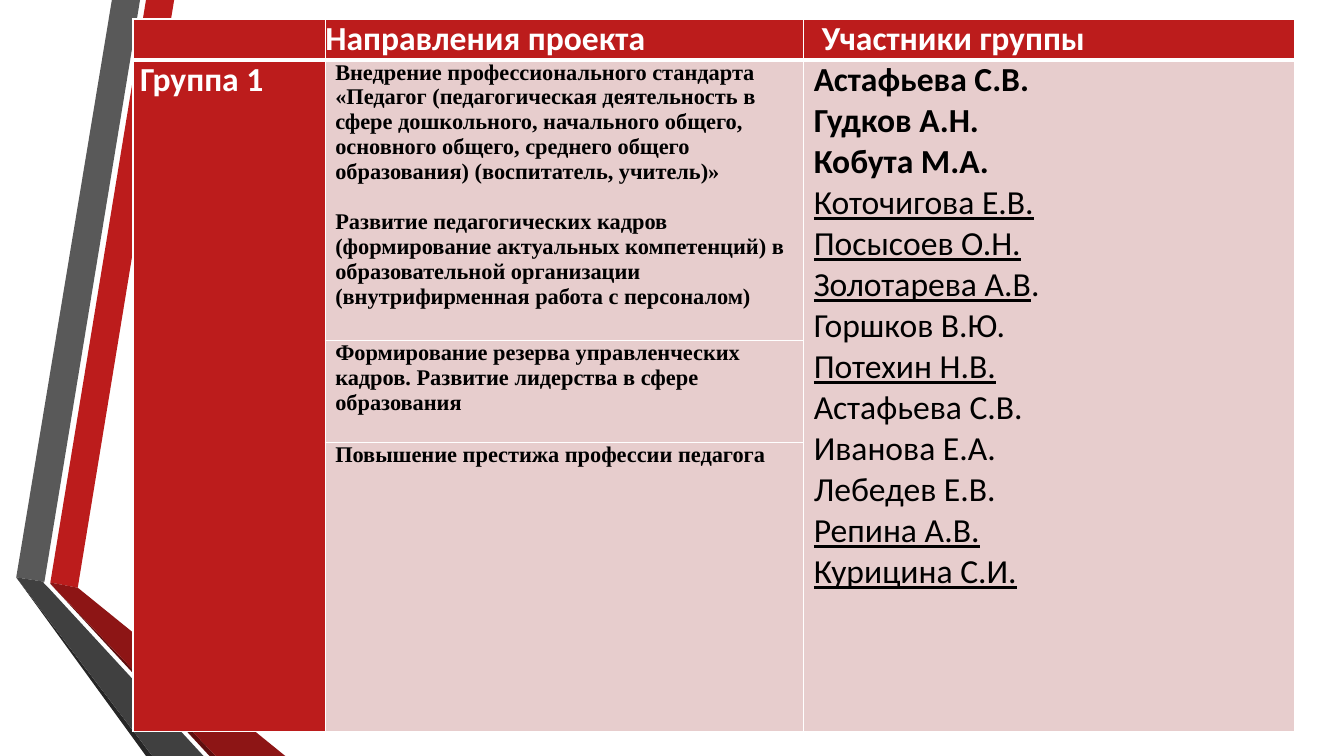
from lxml import etree
from pptx import Presentation
from pptx import util as u
from pptx.dml.color import RGBColor
from pptx.oxml.ns import qn

RED, PINK, WHITE, BLACK = "BC1C1C", "E7CDCD", "FFFFFF", "000000"
SANS, SERIF = "Calibri", "Times New Roman"

# Folded ribbons on the left: colour and outline in centimetres
RIBBONS = [
    (RED, [(1.27, 14.68), (1.96, 14.81), (4.39, 0), (3.68, 0)]),
    ("595959", [(3.53, 0), (2.82, 0), (0.41, 14.55), (1.12, 14.66)]),
    ("262626", [(0.41, 14.55), (3.68, 19.05), (3.84, 19.05)]),
    ("5E0E0E", [(1.27, 14.71), (5.28, 19.05), (5.44, 19.05)]),
    ("8D1515", [(1.27, 14.71), (5.44, 19.05), (7.19, 19.05),
                (1.96, 14.81), (1.27, 14.68)]),
    ("404040", [(5.13, 19.05), (1.22, 14.81), (1.09, 14.68),
                (1.12, 14.66), (0.41, 14.55), (3.84, 19.05)]),
]
COLUMNS = [4.85, 12.06, 12.37]
ROWS = [0.97, 7.06, 2.57, 7.29]

STANDARD = [
    "Внедрение профессионального стандарта «Педагог (педагогическая "
    "деятельность в сфере дошкольного, начального общего, основного общего, "
    "среднего общего образования) (воспитатель, учитель)»",
    "Развитие педагогических кадров (формирование актуальных компетенций) "
    "в образовательной организации (внутрифирменная работа с персоналом)",
]
RESERVE = ["Формирование резерва управленческих кадров. "
           "Развитие лидерства в сфере образования"]
PRESTIGE = ["Повышение престижа профессии педагога"]

# Each member: name and style (bold, underlined or plain)
MEMBERS = [
    ("Астафьева С.В.", "bold"), ("Гудков А.Н.", "bold"),
    ("Кобута М.А.", "bold"), ("Коточигова Е.В.", "underlined"),
    ("Посысоев О.Н.", "underlined"), ("Золотарева А.В", "underlined"),
    ("Горшков В.Ю.", "plain"), ("Потехин Н.В.", "underlined"),
    ("Астафьева С.В.", "plain"), ("Иванова Е.А.", "plain"),
    ("Лебедев Е.В.", "plain"), ("Репина А.В.", "underlined"),
    ("Курицина С.И.", "underlined"),
]


def colour(value):
    return RGBColor.from_string(value)


class Page:
    """Holds the text style and the slide being filled."""

    body_size, large_size = u.Pt(16), u.Pt(24)

    def __init__(self, deck):
        self.slide = deck.slides.add_slide(deck.slide_layouts[6])

    def ribbon(self, fill, points):
        corners = [(u.Cm(x), u.Cm(y)) for x, y in points]
        builder = self.slide.shapes.build_freeform(*corners[0])
        builder.add_line_segments(corners[1:], close=True)
        shape = builder.convert_to_shape()
        shape.shadow.inherit = False
        shape.fill.solid()
        shape.fill.fore_color.rgb = colour(fill)
        shape.line.fill.background()

    def table(self, left, top, columns, rows):
        frame = self.slide.shapes.add_table(
            len(rows), len(columns), u.Cm(left), u.Cm(top),
            u.Cm(sum(columns)), u.Cm(sum(rows)))
        table = frame.table
        for column, width in zip(table.columns, columns):
            column.width = u.Cm(width)
        for row, height in zip(table.rows, rows):
            row.height = u.Cm(height)
        for r in range(len(rows)):
            for c in range(len(columns)):
                cell = table.cell(r, c)
                self.borders(cell, {"lnL": 1, "lnR": 1,
                                    "lnT": 3 if r == 1 else 1,
                                    "lnB": 3 if r == 0 else 1})
                cell.fill.solid()
                cell.fill.fore_color.rgb = colour(
                    RED if r == 0 or c == 0 else PINK)
                cell.margin_left = cell.margin_right = 0
                cell.margin_top = cell.margin_bottom = 0
        return table

    def borders(self, cell, widths):
        properties = cell._tc.get_or_add_tcPr()
        for side, points in widths.items():
            line = etree.SubElement(properties, qn("a:" + side),
                                    w=str(u.Pt(points)))
            fill = etree.SubElement(line, qn("a:solidFill"))
            etree.SubElement(fill, qn("a:srgbClr"), val=WHITE)

    def style(self, span, font, size, ink, bold=True, underline=False):
        span.font.name, span.font.size = font, size
        span.font.color.rgb = colour(ink)
        span.font.bold, span.font.underline = bold, underline

    def heading(self, cell, words, indent=0):
        cell.margin_left = u.Cm(indent)
        para = cell.text_frame.paragraphs[0]
        para.text = words
        self.style(para.runs[0], SANS, self.large_size, WHITE)

    def directions(self, cell, lines):
        cell.margin_left = u.Cm(0.25)
        cell.text_frame.text = "\n".join(lines)
        for number, para in enumerate(cell.text_frame.paragraphs):
            if number:
                para.space_before = u.Pt(18)
            self.style(para.runs[0], SERIF, self.body_size, BLACK)

    def members(self, cell, people):
        cell.margin_left = u.Cm(0.25)
        cell.text_frame.text = "\n".join(name for name, _ in people)
        for para, (name, look) in zip(cell.text_frame.paragraphs, people):
            if not name.endswith("."):
                para.add_run().text = "."
            for number, span in enumerate(para.runs):
                self.style(span, SANS, self.large_size, BLACK, look == "bold",
                           look == "underlined" and number == 0)


def main():
    deck = Presentation()
    deck.slide_width, deck.slide_height = u.Cm(33.87), u.Cm(19.05)
    page = Page(deck)
    for fill, points in RIBBONS:
        page.ribbon(fill, points)

    groups = page.table(3.35, 0.48, COLUMNS, ROWS)
    for column in (0, 2):
        groups.cell(1, column).merge(groups.cell(3, column))
    page.heading(groups.cell(0, 1), "Направления проекта")
    page.heading(groups.cell(0, 2), "Участники группы", 0.45)
    page.heading(groups.cell(1, 0), "Группа 1", 0.18)
    for row, lines in enumerate((STANDARD, RESERVE, PRESTIGE), start=1):
        page.directions(groups.cell(row, 1), lines)
    page.members(groups.cell(1, 2), MEMBERS)
    deck.save("out.pptx")


if __name__ == "__main__":
    main()
